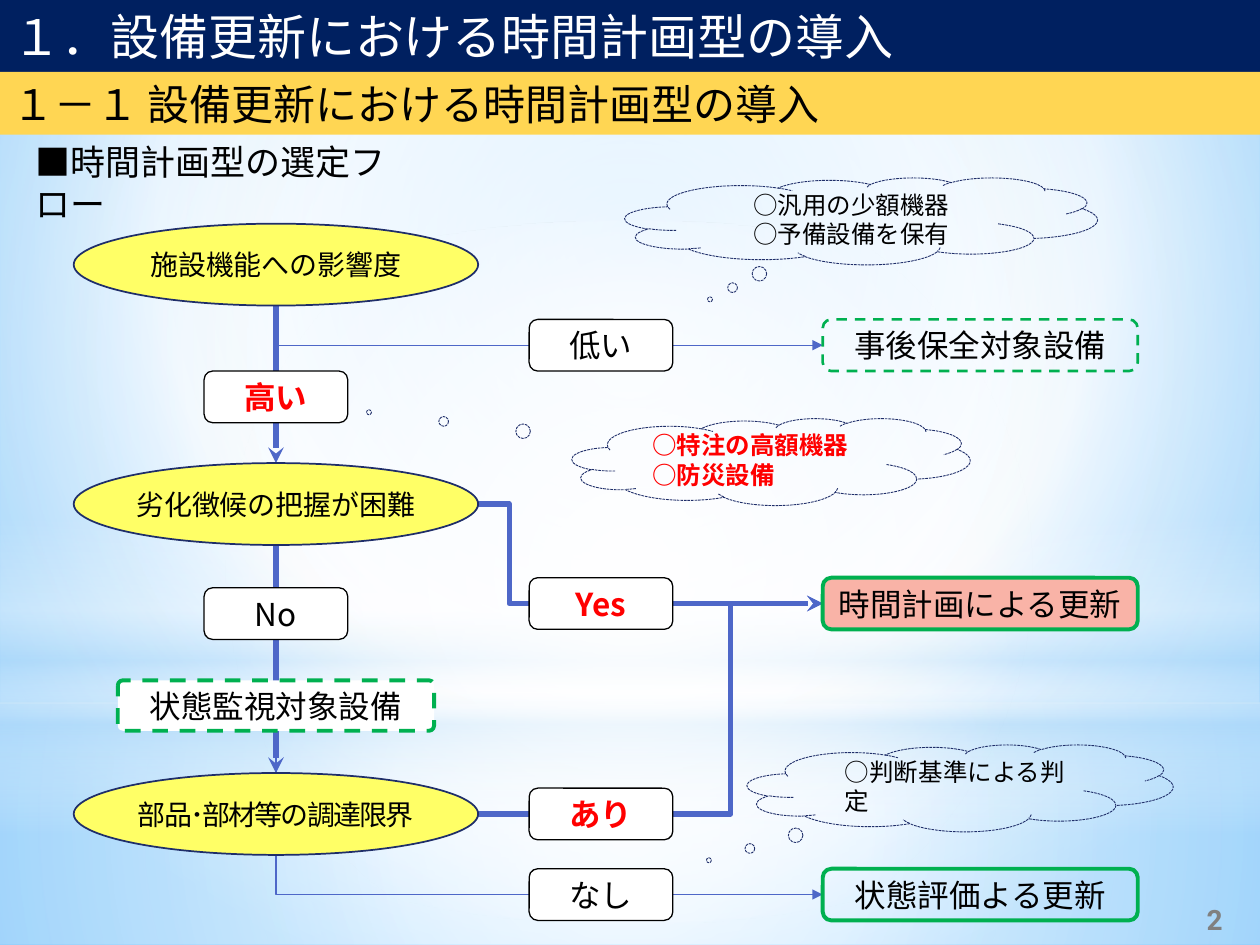
from collections import namedtuple

from lxml.etree import SubElement
from pptx import Presentation
from pptx.dml.color import RGBColor
from pptx.enum.dml import MSO_LINE as Dash
from pptx.enum.shapes import MSO_CONNECTOR as Link, MSO_SHAPE as Kind
from pptx.enum.text import MSO_ANCHOR as Anchor, MSO_AUTO_SIZE as Fit, PP_ALIGN as Align
from pptx.oxml.ns import qn
from pptx.util import Inches, Pt

Box = namedtuple("Box", "left top width height")

WHITE = RGBColor(0xFF, 0xFF, 0xFF)
BLACK = RGBColor(0, 0, 0)
RED = RGBColor(0xFF, 0, 0)
NAVY = RGBColor(0, 0x20, 0x60)
GOLD = RGBColor(0xFF, 0xD6, 0x53)
YELLOW = RGBColor(0xFF, 0xFF, 0x66)
OUTLINE = RGBColor(0x1F, 0x2E, 0x69)
GREEN = RGBColor(0, 0xB0, 0x50)
SALMON = RGBColor(0xF9, 0xB3, 0xA7)
BLUE = RGBColor(0x4E, 0x67, 0xC8)
GREY = RGBColor(0x80, 0x80, 0x80)
SKY = RGBColor(0x9E, 0xD5, 0xFF)
DEEP_SKY = RGBColor(0x5B, 0xB9, 0xFF)
PALE = RGBColor(0xB4, 0xDC, 0xFA)

FONT = "Noto Sans CJK JP"
SLIDE = Box(0, 0, 10, 7.5)
COLS = {"spine": 2.19, "answer": 4.77, "merge": 5.8, "result": 7.78}
ROWS = {"impact": 2.1, "low": 2.74, "high": 3.15, "signs": 4, "yes": 4.79, "no": 4.87,
        "monitor": 5.6, "parts": 6.46, "none": 7.1}
STEP, ANSWER, RESULT = (3.21, 0.65), (1.14, 0.41), (2.5, 0.41)
STEP_RIGHT = COLS["spine"] + STEP[0] / 2
RESULT_LEFT = COLS["result"] - RESULT[0] / 2


def place(shape, box):
    """Set a shape's position and size from a box in inches."""
    for name, value in box._asdict().items():
        setattr(shape, name, Inches(value))


def paint(shape, fill=None, line=None, width=1, dash=None):
    """Set a shape's fill and outline."""
    for part, color in ((shape.fill, fill), (shape.line.fill, line)):
        if color is None:
            part.background()
        else:
            part.solid()
            part.fore_color.rgb = color
    if line is not None:
        shape.line.width, shape.line.dash_style = Pt(width), dash


def write(shape, lines, size, color=BLACK, bold=False, align=Align.CENTER, inset=0.1,
          inset_y=0.05, indent=0, font=FONT, spacing=None):
    """Fill a shape with one formatted paragraph per line."""
    frame = shape.text_frame
    frame.text = "\n".join(lines)
    settings = {"word_wrap": True, "auto_size": Fit.NONE, "vertical_anchor": Anchor.MIDDLE,
                "margin_left": Inches(inset), "margin_right": Inches(inset),
                "margin_top": Inches(inset_y), "margin_bottom": Inches(inset_y)}
    for name, value in settings.items():
        setattr(frame, name, value)
    for para in frame.paragraphs:
        para.alignment, para.space_before = align, Pt(0)
        props = para._p.get_or_add_pPr()
        props.set("marL", str(Inches(indent)))
        props.set("indent", "0")
        SubElement(props, qn("a:buNone"))
        for span in para.runs:
            for name, value in {"size": Pt(size), "bold": bold, "name": font}.items():
                setattr(span.font, name, value)
            span.font.color.rgb = color
            SubElement(span._r.rPr, qn("a:ea"), typeface=font)
            if spacing is not None:
                span._r.rPr.set("spc", str(spacing))


def gradient(holder, stops, focus=None):
    """Turn the solid fill of an element into a radial or vertical gradient."""
    grad = holder.makeelement(qn("a:gradFill"), {"rotWithShape": "1"})
    holder.replace(holder.find(qn("a:solidFill")), grad)
    stop_list = SubElement(grad, qn("a:gsLst"))
    for position, color, alpha in stops:
        stop = SubElement(stop_list, qn("a:gs"), pos=str(position * 1000))
        tone = SubElement(stop, qn("a:srgbClr"), val=str(color))
        SubElement(tone, qn("a:alpha"), val=str(alpha * 1000))
    if focus:
        route = SubElement(grad, qn("a:path"), {"path": "circle"})
        sides = {side: str(share * 1000) for side, share in zip("ltrb", focus)}
        SubElement(route, qn("a:fillToRect"), sides)
    else:
        SubElement(grad, qn("a:lin"), ang="5400000", scaled="0")


def add_shape(page, kind, box, **style):
    """Add a painted preset shape without shadow."""
    shape = page.shapes.add_shape(kind, *map(Inches, box))
    shape.shadow.inherit = False
    paint(shape, **style)
    return shape


def add_backdrop(page, box):
    """Draw the sky-coloured background and its soft light panels."""
    page.background.fill.solid()
    gradient(page.element.find(".//" + qn("p:bgPr")),
             [(0, SKY, 100), (60, WHITE, 100), (100, DEEP_SKY, 100)], (20, 10, 20, 60))
    center, horizon = (50,) * 4, 5.58
    panels = [
        (Kind.RECTANGLE, horizon, box.height - horizon,
         [(0, WHITE, 91), (37, WHITE, 76), (100, PALE, 79)], center),
        (Kind.RECTANGLE, 0, horizon, [(0, WHITE, 89), (48, WHITE, 62), (100, PALE, 79)], center),
        (Kind.RECTANGLE, 4.12, 2.5, [(0, WHITE, 0), (29, WHITE, 30), (45, PALE, 40),
                                     (55, WHITE, 26), (65, PALE, 60), (100, WHITE, 0)], None),
        (Kind.OVAL, 1.75, horizon, [(0, WHITE, 100), (56, WHITE, 0)], center)]
    for kind, top, height, stops, focus in panels:
        panel = add_shape(page, kind, Box(box.left, top, box.width, height), fill=WHITE)
        gradient(panel._element.spPr, stops, focus)


def add_headings(page, box):
    """Place the title, section band, flow caption and page number."""
    title, caption = page.shapes.title, page.placeholders[1]
    for holder in (title, caption):
        page.shapes._spTree.append(holder._element)
    place(title, Box(box.left, box.top, box.width, 0.57))
    paint(title, NAVY)
    write(title, ["１．設備更新における時間計画型の導入"], 28, WHITE, align=Align.LEFT)
    band = add_shape(page, Kind.RECTANGLE, Box(box.left, 0.57, box.width, 0.5), fill=GOLD)
    write(band, ["１－１ 設備更新における時間計画型の導入"], 24, align=Align.LEFT)
    place(caption, Box(0.18, 1.23, 3.1, 0.44))
    write(caption, ["■時間計画型の選定フロー"], 20, align=Align.LEFT)
    number = page.shapes.add_textbox(*map(Inches, (9.28, 7.1, 0.72, 0.4)))
    write(number, ["2"], 16, GREY, bold=True, font="Roboto")


def add_link(page, start, end, width, head=None, tail=None, preset=None, bend=None):
    """Join two points with a straight or bent line and an arrowhead."""
    kind = Link.ELBOW if preset else Link.STRAIGHT
    link = page.shapes.add_connector(kind, *map(Inches, start + end))
    link.line.color.rgb, link.line.width = BLUE, Pt(width)
    props = link._element.spPr
    if preset:
        shape = props.find(qn("a:prstGeom"))
        shape.set("prst", preset)
        if bend is not None:
            SubElement(shape.find(qn("a:avLst")), qn("a:gd"), name="adj1",
                       fmla=f"val {round(bend * 100000)}")
    for side, arrow in (("headEnd", head), ("tailEnd", tail)):
        if arrow:
            SubElement(props.find(qn("a:ln")), qn("a:" + side), type=arrow)
    SubElement(props, qn("a:effectLst"))


def add_links(page):
    """Draw the arrows of the flow."""
    spine, half = COLS["spine"], STEP[1] / 2
    for source, target in (("impact", "signs"), ("signs", "parts")):
        add_link(page, (spine, ROWS[source] + half), (spine, ROWS[target] - half), 3,
                 tail="stealth")
    for top, row in ((ROWS["impact"] + half, "low"), (ROWS["monitor"] + 0.2, "none")):
        add_link(page, (RESULT_LEFT, ROWS[row]), (spine, top), 0.75, head="triangle",
                 preset="bentConnector2")
    for row, turn in (("signs", 4.04), ("parts", COLS["merge"])):
        add_link(page, (STEP_RIGHT, ROWS[row]), (RESULT_LEFT, ROWS["yes"]), 3, tail="stealth",
                 preset="bentConnector3", bend=(turn - STEP_RIGHT) / (RESULT_LEFT - STEP_RIGHT))


def add_node(page, kind, col, row, extent, style, text, **font):
    """Add a labelled shape centred on a grid crossing."""
    width, height = extent
    box = Box(COLS[col] - width / 2, ROWS[row] - height / 2, width, height)
    node = add_shape(page, kind, box, **style)
    write(node, [text], **font)
    return node


def add_nodes(page):
    """Place the steps, answers and results of the flow."""
    step = {"fill": YELLOW, "line": OUTLINE, "width": 1}
    answer = {"fill": WHITE, "line": BLACK, "width": 0.75}
    frame = {"line": GREEN, "width": 2.25}
    for row, text, gap in (("impact", "施設機能への影響度", None), ("signs", "劣化徴候の把握が困難", None),
                           ("parts", "部品･部材等の調達限界", -100)):
        add_node(page, Kind.OVAL, "spine", row, STEP, step, text, size=16, inset=0, spacing=gap)
    for col, row, text, color in (("answer", "low", "低い", BLACK), ("spine", "high", "高い", RED),
                                  ("answer", "yes", "Yes", RED), ("spine", "no", "No", BLACK),
                                  ("answer", "parts", "あり", RED), ("answer", "none", "なし", BLACK)):
        add_node(page, Kind.ROUNDED_RECTANGLE, col, row, ANSWER, answer, text, size=18,
                 color=color, bold=color == RED)
    for row, text, extra in (("low", "事後保全対象設備", {"width": 1.5, "dash": Dash.DASH}),
                             ("yes", "時間計画による更新", {"fill": SALMON}),
                             ("none", "状態評価よる更新", {})):
        add_node(page, Kind.ROUNDED_RECTANGLE, "result", row, RESULT, frame | extra, text, size=18)
    monitor = add_node(page, Kind.ROUNDED_RECTANGLE, "spine", "monitor", (2.51, 0.4),
                       frame | {"fill": WHITE, "dash": Dash.DASH}, "状態監視対象設備", size=18)
    monitor.adjustments[0] = 0.1


def add_cloud(page, box, pointer, lines, **font):
    """Add a thought cloud whose bubbles lead to the pointer."""
    style = {"line": OUTLINE, "width": 0.5, "dash": Dash.SQUARE_DOT}
    cloud = add_shape(page, Kind.CLOUD_CALLOUT, box, **style)
    cloud.adjustments[0], cloud.adjustments[1] = pointer
    write(cloud, lines, 14, align=Align.LEFT, inset=0, inset_y=0, **font)


def main():
    """Build and save the slide."""
    deck = Presentation()
    deck.slide_width, deck.slide_height = Inches(SLIDE.width), Inches(SLIDE.height)
    page = deck.slides.add_slide(deck.slide_layouts[1])
    add_backdrop(page, SLIDE)
    add_headings(page, SLIDE)
    add_links(page)
    add_nodes(page)
    add_cloud(page, Box(4.96, 1.41, 3.75, 0.69), (-0.32, 0.9),
              ["○汎用の少額機器", "○予備設備を保有"], indent=0.5)
    add_cloud(page, Box(4.54, 3.32, 3.16, 0.69), (-1.01, -0.57),
              ["○特注の高額機器", "○防災設備"], indent=0.2, color=RED, bold=True)
    add_cloud(page, Box(5.93, 5.91, 3.38, 0.69), (-0.59, 0.83), ["○判断基準による判定"], indent=0.31)
    deck.save("out.pptx")


if __name__ == "__main__":
    main()
